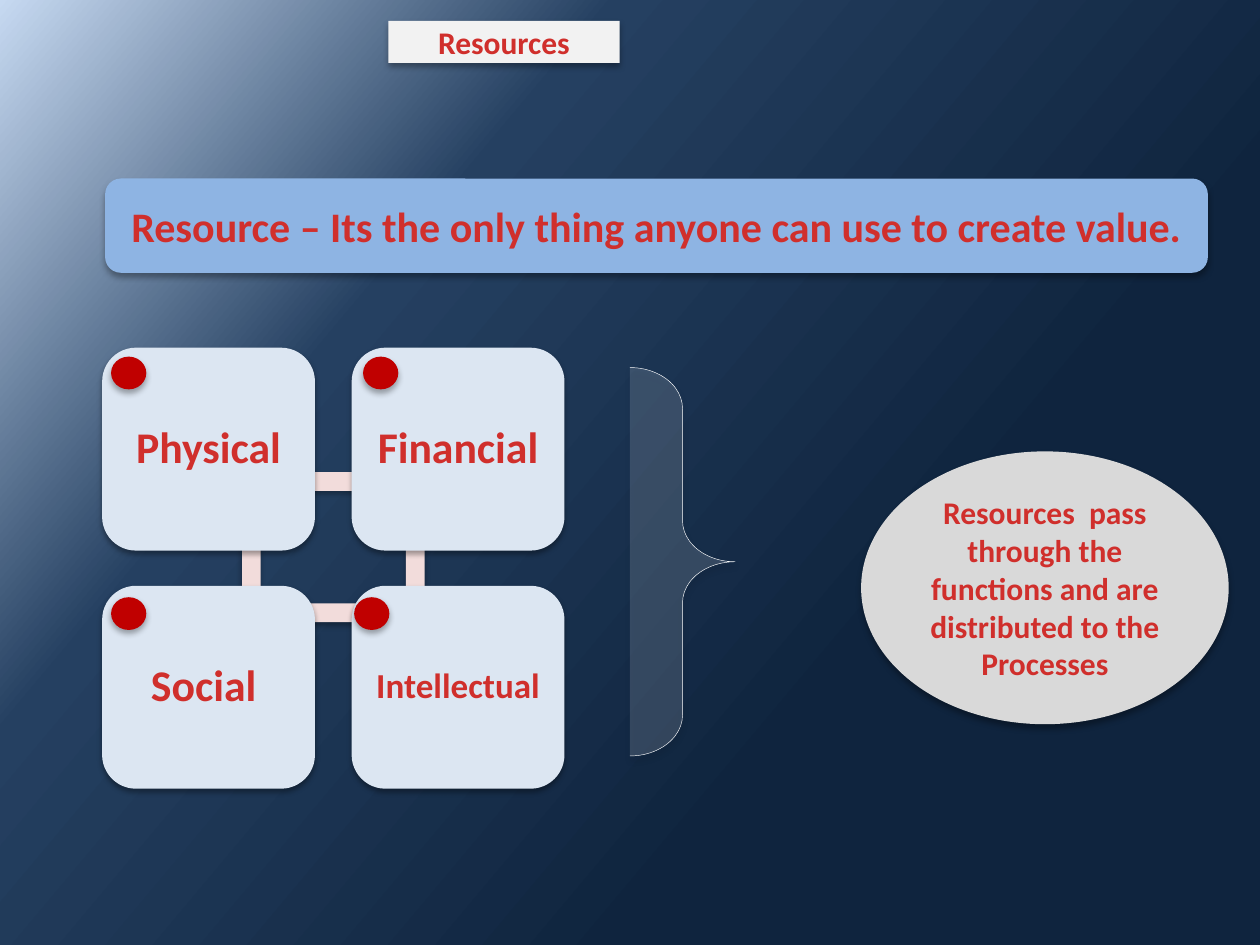
from dataclasses import dataclass
from itertools import product

from pptx import Presentation
from pptx.dml.color import RGBColor
from pptx.enum.shapes import MSO_SHAPE
from pptx.enum.text import MSO_ANCHOR, MSO_AUTO_SIZE, PP_ALIGN
from pptx.oxml import parse_xml
from pptx.oxml.ns import nsdecls
from pptx.util import Cm, Pt

ROUND = MSO_SHAPE.ROUNDED_RECTANGLE
OVAL = MSO_SHAPE.OVAL
FRAME = MSO_SHAPE.FRAME
BRACE = MSO_SHAPE.RIGHT_BRACE
MIDDLE = MSO_ANCHOR.MIDDLE
CENTER = PP_ALIGN.CENTER
FIXED = MSO_AUTO_SIZE.NONE


@dataclass(frozen=True)
class Theme:
    """Colours, font and type sizes of the slide."""
    font: str = "Calibri"
    ink: str = "D02F2C"
    pill: str = "F2F2F2"
    banner: str = "8EB4E3"
    card: str = "DCE6F2"
    frame: str = "F2DCDB"
    dot: str = "C00000"
    oval: str = "D9D9D9"
    line: str = "FFFFFF"
    back: tuple = ((0, "C6D9F1"), (30, "254061"), (69, "0F243E"), (100, "0F243E"))
    small: int = 18
    medium: int = 20
    large: int = 24
    huge: int = 25


THEME = Theme()


def paint_back(slide):
    """Fill the slide background with the diagonal gradient."""
    stops = "".join(
        f'<a:gs pos="{pos * 1000}"><a:srgbClr val="{color}"/></a:gs>'
        for pos, color in THEME.back)
    slide.element.cSld.insert(0, parse_xml(
        f'<p:bg {nsdecls("p", "a")}><p:bgPr><a:gradFill rotWithShape="1">'
        f'<a:gsLst>{stops}</a:gsLst><a:lin ang="2400000" scaled="0"/>'
        '</a:gradFill><a:effectLst/></p:bgPr></p:bg>'))


def add_shade(shape, alpha=32, blur=3.5, dist=2.2):
    """Give a shape a soft shadow that falls straight down."""
    shape.element.spPr.append(parse_xml(
        f'<a:effectLst {nsdecls("a")}><a:outerShdw blurRad="{Pt(blur)}" '
        f'dist="{Pt(dist)}" dir="5400000" rotWithShape="0"><a:srgbClr val="000000">'
        f'<a:alpha val="{alpha * 1000}"/></a:srgbClr></a:outerShdw></a:effectLst>'))


def fill_shape(shape, color):
    """Fill a shape with one colour and leave off its outline."""
    shape.fill.solid()
    shape.fill.fore_color.rgb = RGBColor.from_string(color)
    shape.line.fill.background()


def add_shape(slide, kind, box, color, **shade):
    """Add a filled, shaded shape in a box given in centimetres."""
    shape = slide.shapes.add_shape(kind, *map(Cm, box))
    fill_shape(shape, color)
    add_shade(shape, **shade)
    return shape


def put_text(shape, text, size=THEME.small, space=None, inset=None):
    """Set centred bold text in a shape."""
    frame = shape.text_frame
    frame.word_wrap = True
    frame.auto_size = FIXED
    frame.vertical_anchor = MIDDLE
    if inset is not None:
        frame.margin_left = frame.margin_right = Cm(inset)
        frame.margin_top = frame.margin_bottom = Cm(inset)
    par = frame.paragraphs[0]
    par.alignment = CENTER
    par.line_spacing = space
    run = par.add_run()
    run.text = text
    font = run.font
    font.name, font.size, font.bold = THEME.font, Pt(size), True
    font.color.rgb = RGBColor.from_string(THEME.ink)


def draw_title(slide, box):
    """Shape the title placeholder as a rounded pill."""
    title = slide.shapes.title
    title.left, title.top, title.width, title.height = map(Cm, box)
    title.element.spPr.append(parse_xml(
        f'<a:prstGeom {nsdecls("a")} prst="roundRect"><a:avLst/></a:prstGeom>'))
    fill_shape(title, THEME.pill)
    add_shade(title)
    put_text(title, "Resources")


def draw_banner(slide, box):
    """Draw the wide bar with the definition."""
    bar = add_shape(slide, ROUND, box, THEME.banner)
    put_text(bar, "Resource – Its the only thing anyone can use to create value.",
             size=THEME.large)


def draw_cards(slide, box):
    """Draw four linked cards in a grid, each with a dot."""
    left, top, width, height = box
    wide, high = 4.29, 4.09
    add_shape(slide, FRAME, (left + 2.82, top + 2.51, 3.68, 3.02), THEME.frame)
    names = ("Physical", "Financial", "Social ", "Intellectual")
    sizes = (THEME.huge,) * 3 + (THEME.medium,)
    dots = ((0.18, 0.18), (0.23, 0.18), (0.18, 0.23), (0.05, 0.23))
    spots = product((top, top + height - high), (left, left + width - wide))
    for name, size, (dx, dy), (y, x) in zip(names, sizes, dots, spots):
        card = add_shape(slide, ROUND, (x, y, wide, high), THEME.card,
                         alpha=35, blur=3.1, dist=1.8)
        put_text(card, name, size=size, space=0.9, inset=0.25)
        add_shape(slide, OVAL, (x + dx, y + dy, 0.71, 0.66), THEME.dot)


def draw_brace(slide, box):
    """Draw the see-through brace beside the cards."""
    brace = add_shape(slide, BRACE, box, THEME.card)
    brace.adjustments[0] = 0.39
    brace.line.color.rgb = RGBColor.from_string(THEME.line)
    brace.line.width = Pt(0.25)
    color = brace.element.spPr.find(
        "a:solidFill/a:srgbClr", {"a": "http://schemas.openxmlformats.org/drawingml/2006/main"})
    color.append(parse_xml(f'<a:alpha {nsdecls("a")} val="17000"/>'))


def draw_result(slide, box):
    """Draw the oval that tells where resources go."""
    oval = add_shape(slide, OVAL, box, THEME.oval)
    put_text(oval, "Resources  pass through the functions and are "
                   "distributed to the Processes")


def main():
    """Build the slide and save it."""
    deck = Presentation()
    deck.slide_width, deck.slide_height = Cm(25.4), Cm(19.05)
    slide = deck.slides.add_slide(deck.slide_layouts[5])
    paint_back(slide)
    draw_title(slide, (7.83, 0.42, 4.66, 0.85))
    draw_cards(slide, (2.06, 7.01, 9.32, 8.89))
    draw_brace(slide, (12.7, 7.41, 2.12, 7.83))
    draw_result(slide, (17.36, 9.1, 7.41, 5.5))
    draw_banner(slide, (2.12, 3.6, 22.23, 1.9))
    deck.save("out.pptx")


if __name__ == "__main__":
    main()
